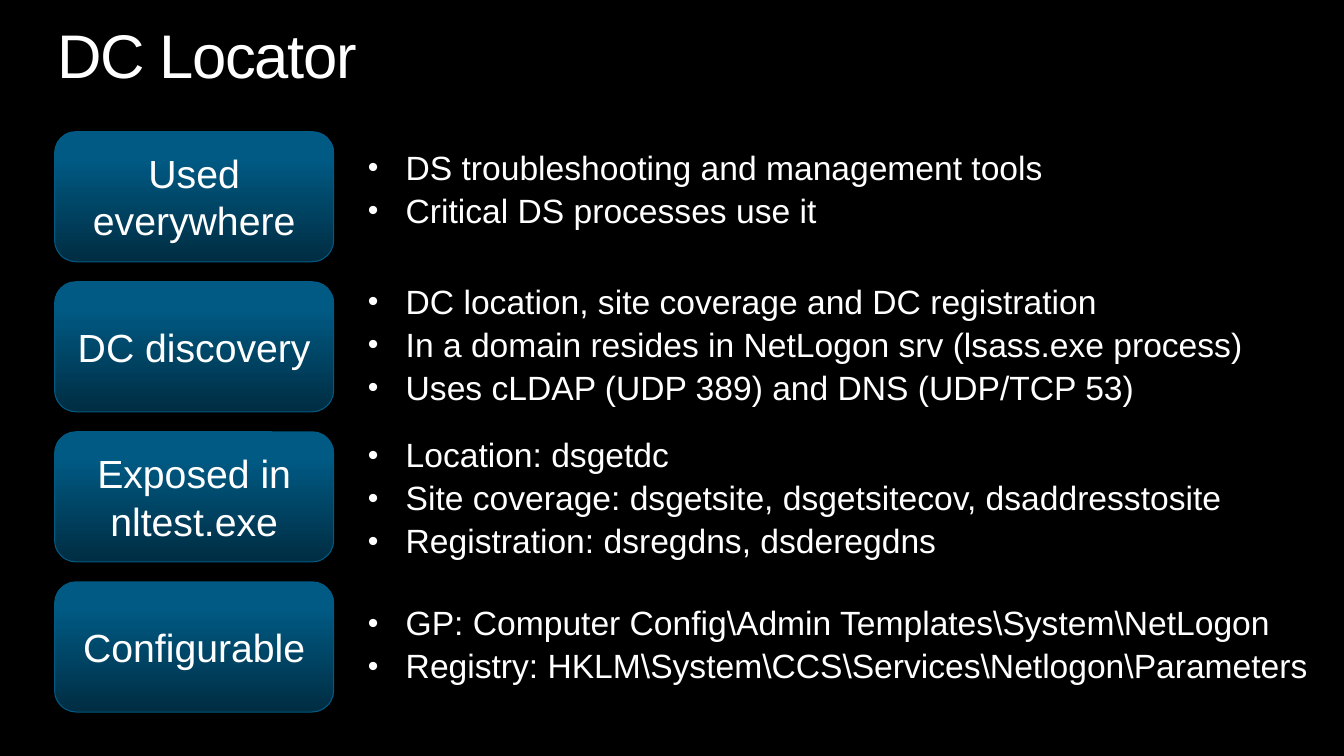
from lxml import etree
from pptx import Presentation
from pptx.dml.color import RGBColor
from pptx.enum import shapes, text
from pptx.oxml.ns import qn
from pptx.util import Pt


def color(code):
    return RGBColor.from_string(code)


def write(shape, words, size, align="LEFT", inset=(0, 0), anchor="TOP",
          spacing=1.0, before=0, indent=0, track=0):
    """Fill a shape with one paragraph per line; an indent adds bullets."""
    frame = shape.text_frame
    frame.word_wrap = True
    frame.vertical_anchor = text.MSO_ANCHOR[anchor]
    frame.margin_left = frame.margin_right = Pt(inset[0])
    frame.margin_top = frame.margin_bottom = Pt(inset[1])
    frame.text = words
    for i, para in enumerate(frame.paragraphs):
        para.alignment = text.PP_ALIGN[align]
        para.line_spacing = spacing
        para.space_before = Pt(before if i else 0)
        if indent:
            props = para._p.get_or_add_pPr()
            props.set("marL", str(Pt(indent)))
            props.set("indent", str(-Pt(indent)))
            etree.SubElement(props, qn("a:buSzPct"), val="90000")
            etree.SubElement(props, qn("a:buFont"), typeface="Arial")
            etree.SubElement(props, qn("a:buChar"), char="•")
        run = para.runs[0]
        run.font.name = "Arial"
        run.font.size = Pt(size)
        run.font.color.rgb = color("FFFFFF")
        if track:
            run._r.get_or_add_rPr().set("spc", str(track * 100))


deck = Presentation()
deck.slide_width, deck.slide_height = Pt(960), Pt(540)
slide = deck.slides.add_slide(deck.slide_layouts[6])
slide.background.fill.solid()
slide.background.fill.fore_color.rgb = color("000000")

title = slide.shapes.add_textbox(Pt(41), Pt(18), Pt(878), Pt(48))
write(title, "DC Locator", 44, spacing=0.9, track=-1)

# label, top and width of the bullet list, bullets
rows = [
    ("Used everywhere", 108, 654, [
        "DS troubleshooting and management tools",
        "Critical DS processes use it"]),
    ("DC discovery", 203.8, 654, [
        "DC location, site coverage and DC registration",
        "In a domain resides in NetLogon srv (lsass.exe process)",
        "Uses cLDAP (UDP 389) and DNS (UDP/TCP 53)"]),
    ("Exposed in nltest.exe", 313.2, 654, [
        "Location: dsgetdc",
        "Site coverage: dsgetsite, dsgetsitecov, dsaddresstosite",
        "Registration: dsregdns, dsderegdns"]),
    ("Configurable", 433.4, 686, [
        "GP: Computer Config\\Admin Templates\\System\\NetLogon",
        "Registry: HKLM\\System\\CCS\\Services\\Netlogon\\Parameters"]),
]

for i, (label, top, width, bullets) in enumerate(rows):
    box = slide.shapes.add_shape(
        shapes.MSO_SHAPE.ROUNDED_RECTANGLE,
        Pt(39), Pt(94 + 107.2 * i), Pt(199.4), Pt(93))
    box.shadow.inherit = False
    box.fill.gradient()
    box.fill.gradient_angle = 90
    dark, light = box.fill.gradient_stops
    dark.color.rgb, dark.position = color("002D42"), 0
    light.color.rgb, light.position = color("005A84"), 0.8
    box.line.color.rgb = color("005A84")
    box.line.width = Pt(0.75)
    write(box, label, 28, align="CENTER", inset=(7.2, 3.6), anchor="MIDDLE")

    height = 31.7 * len(bullets) - 5
    notes = slide.shapes.add_textbox(Pt(262.8), Pt(top), Pt(width), Pt(height))
    write(notes, "\n".join(bullets), 24, spacing=0.9, before=4.8, indent=27)

deck.save("out.pptx")
